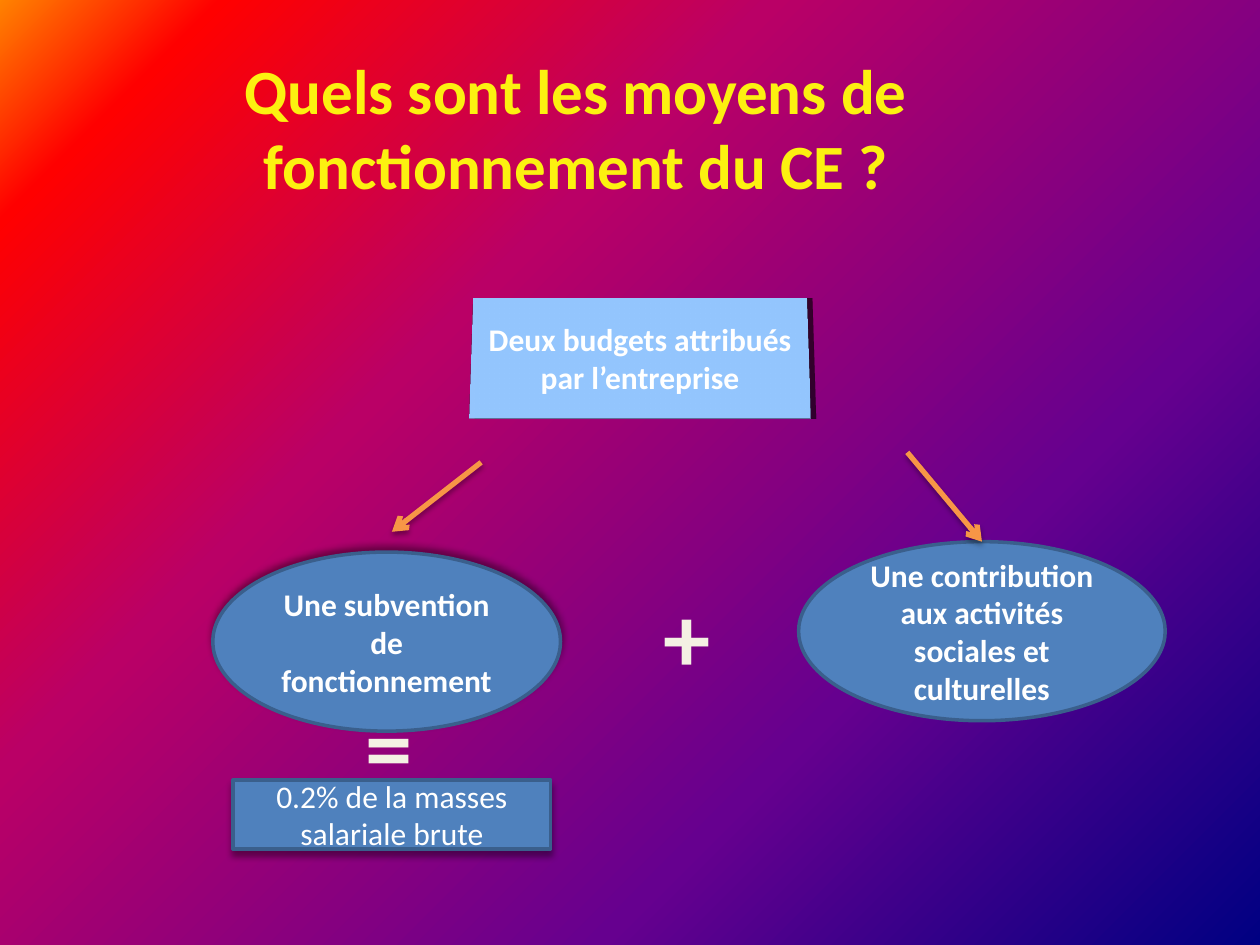
from pptx import Presentation
from pptx.dml.color import RGBColor
from pptx.enum.shapes import MSO_CONNECTOR, MSO_SHAPE
from pptx.enum.text import MSO_ANCHOR, MSO_AUTO_SIZE, PP_ALIGN
from pptx.oxml import parse_xml
from pptx.oxml.ns import nsdecls
from pptx.util import Cm, Pt

STOPS = [(0, "000082"), (30, "66008F"), (65, "BA0066"), (90, "FF0000"), (100, "FF8200")]


def color(value):
    return RGBColor.from_string(value)


def write(shape, text, size=18, fill="FFFFFF", bold=True, wrap=True, outline=None):
    tf = shape.text_frame
    tf.word_wrap = wrap
    p = tf.paragraphs[0]
    p.alignment = PP_ALIGN.CENTER
    r = p.add_run()
    r.text = text
    r.font.name = "Calibri"
    r.font.size = Pt(size)
    r.font.bold = bold
    r.font.color.rgb = color(fill)
    if outline:
        r.font._element.insert(0, parse_xml(
            f'<a:ln {nsdecls("a")} w="12700"><a:solidFill>'
            f'<a:srgbClr val="{outline}"/></a:solidFill></a:ln>'))


def add_shadow(shape, angle, blur=4, dist=3, alpha=40):
    shape._element.spPr.append(parse_xml(
        f'<a:effectLst {nsdecls("a")}><a:outerShdw blurRad="{Pt(blur)}" dist="{Pt(dist)}" '
        f'dir="{angle * 60000}" algn="ctr" rotWithShape="0"><a:srgbClr val="000000">'
        f'<a:alpha val="{alpha * 1000}"/></a:srgbClr></a:outerShdw></a:effectLst>'))


def tilt(shape):
    """Show the shape in perspective, seen from above."""
    shape._element.spPr.append(parse_xml(
        f'<a:scene3d {nsdecls("a")}><a:camera prst="perspectiveAbove"/>'
        '<a:lightRig rig="threePt" dir="t"/></a:scene3d>'))


class Deck:
    fill, border, accent = "4F81BD", "3A5F8C", "F79646"

    def __init__(self):
        self.prs = Presentation()
        self.prs.slide_width, self.prs.slide_height = Cm(25.4), Cm(19.05)
        self.s = self.prs.slides.add_slide(self.prs.slide_layouts[6])

    def background(self):
        """Radial gradient centred on the bottom right corner."""
        stops = "".join(f'<a:gs pos="{pos * 1000}"><a:srgbClr val="{value}"/></a:gs>'
                        for pos, value in STOPS)
        self.s._element.cSld.insert(0, parse_xml(
            f'<p:bg {nsdecls("p", "a")}><p:bgPr><a:gradFill rotWithShape="1">'
            f'<a:gsLst>{stops}</a:gsLst><a:path path="circle">'
            '<a:fillToRect l="100000" t="100000"/></a:path></a:gradFill>'
            '<a:effectLst/></p:bgPr></p:bg>'))

    def label(self, box, text, **style):
        tb = self.s.shapes.add_textbox(*map(Cm, box))
        write(tb, text, **style)
        tb.text_frame.auto_size = MSO_AUTO_SIZE.SHAPE_TO_FIT_TEXT

    def block(self, kind, box, text, shadow=None, **style):
        sp = self.s.shapes.add_shape(kind, *map(Cm, box))
        sp.fill.solid()
        sp.fill.fore_color.rgb = color(self.fill)
        sp.line.color.rgb = color(self.border)
        sp.line.width = Pt(2)
        if shadow is None:
            sp.shadow.inherit = False
        else:
            add_shadow(sp, shadow)
        sp.text_frame.vertical_anchor = MSO_ANCHOR.MIDDLE
        write(sp, text, **style)
        return sp

    def arrow(self, start, end, target=None):
        c = self.s.shapes.add_connector(MSO_CONNECTOR.STRAIGHT, *map(Cm, start + end))
        if target is not None:
            c.end_connect(target, 0)
        c.line.color.rgb = color(self.accent)
        c.line.width = Pt(3)
        c.line._get_or_add_ln().append(parse_xml(f'<a:tailEnd {nsdecls("a")} type="arrow"/>'))
        add_shadow(c, 90, blur=3.1, dist=1.8, alpha=35)


def main():
    deck = Deck()
    deck.background()
    deck.label((0.51, 0.91, 22.2, 3.33), "Quels sont les moyens de fonctionnement du CE ?",
               size=36, fill="FCF110")
    budgets = deck.block(MSO_SHAPE.RECTANGLE, (9.5, 5.92, 6.81, 2.59),
                         "Deux budgets attribués par l’entreprise", shadow=0)
    tilt(budgets)
    deck.block(MSO_SHAPE.OVAL, (4.29, 11.13, 7.01, 3.61),
               "Une subvention de fonctionnement", shadow=270)
    contribution = deck.block(MSO_SHAPE.OVAL, (16.1, 10.92, 7.39, 3.61),
                              "Une contribution aux activités sociales et culturelles")
    deck.block(MSO_SHAPE.RECTANGLE, (4.7, 15.72, 6.4, 1.4),
               "0.2% de la masses salariale brute", shadow=90, bold=False)
    for sign, left, top in (("=", 7.11, 13.72), ("+", 13.11, 11.53)):
        deck.label((left, top, 1.47, 2.57), sign, size=54, fill="F4F1E3",
                   wrap=False, outline="054697")
    deck.arrow((9.7, 9.32), (7.9, 10.72))
    deck.arrow((18.29, 9.12), (19.81, 10.92), target=contribution)
    deck.prs.save("out.pptx")


if __name__ == "__main__":
    main()
